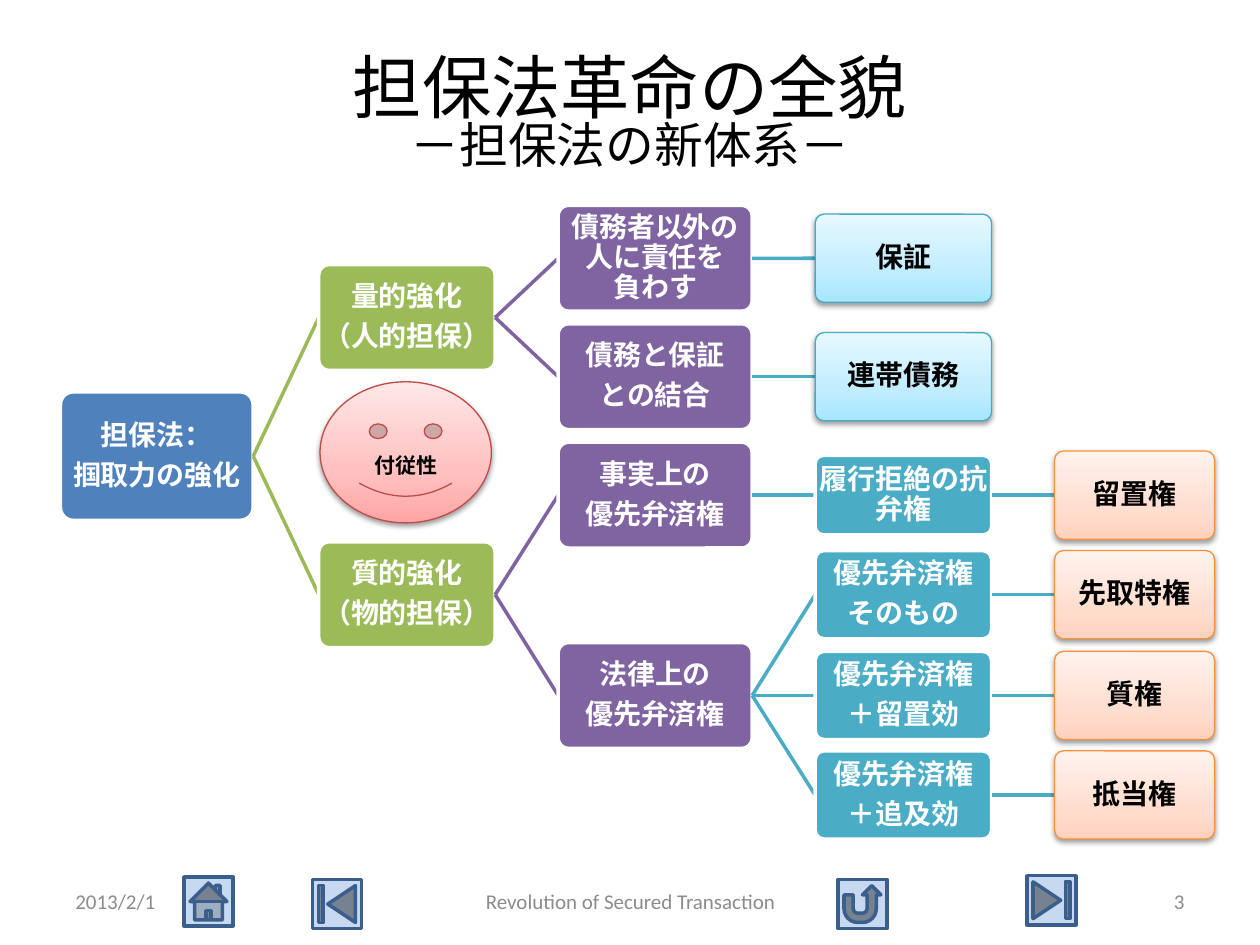
from copy import deepcopy
from pptx import Presentation
from pptx.dml.color import RGBColor
from pptx.enum.shapes import MSO_CONNECTOR, MSO_SHAPE
from pptx.enum.text import MSO_ANCHOR, PP_ALIGN
from pptx.oxml import parse_xml
from pptx.oxml.ns import nsdecls, qn
from pptx.util import Inches, Pt

COLORS = {
    "black": "000000", "white": "FFFFFF", "gray": "8C8C8C",
    "blue": "4F81BD", "green": "9BBB59", "purple": "8064A2", "teal": "4BACC6",
    "button": "C6D9F1", "button_line": "3A5F8C",
    "sky_line": "46AAC5", "orange_line": "F69240", "red_line": "BF4C48",
}
GRADIENTS = {
    "sky": ("A7E6FF", "C1EDFF", "E7F8FF"),
    "orange": ("FFD2BD", "FFDED0", "FFF2ED"),
    "red": ("FFA6A5", "FFC0BF", "FFE7E7"),
}
COLUMNS = [(0.48, 1.53, 1.02), (2.53, 1.4, 0.84), (4.43, 1.54, 0.84),
           (6.47, 1.4, 0.7), (8.37, 1.27, 0.7)]
LEVEL_COLORS = ["blue", "green", "purple", "teal", "teal"]

TREE = ("担保法：\n掴取力の強化", 3.62, "blue", [
    ("量的強化\n（人的担保）", 2.52, "green", [
        ("債務者以外の人に責任を\v負わす", 2.05, "purple", [("保証", 2.05, "sky", [])]),
        ("債務と保証\nとの結合", 2.99, "purple", [("連帯債務", 2.99, "sky", [])]),
    ]),
    ("質的強化\n（物的担保）", 4.72, "green", [
        ("事実上の\n優先弁済権", 3.93, "purple", [
            ("履行拒絶の抗弁権", 3.93, "teal", [("留置権", 3.93, "orange", [])]),
        ]),
        ("法律上の\n優先弁済権", 5.52, "purple", [
            ("優先弁済権\nそのもの", 4.72, "teal", [("先取特権", 4.72, "orange", [])]),
            ("優先弁済権\n＋留置効", 5.52, "teal", [("質権", 5.52, "orange", [])]),
            ("優先弁済権\n＋追及効", 6.31, "teal", [("抵当権", 6.31, "orange", [])]),
        ]),
    ]),
])
BUTTONS = [(MSO_SHAPE.ACTION_BUTTON_HOME, 1.46, 6.96),
           (MSO_SHAPE.ACTION_BUTTON_BEGINNING, 2.48, 6.98),
           (MSO_SHAPE.ACTION_BUTTON_END, 8.15, 6.95),
           (MSO_SHAPE.ACTION_BUTTON_RETURN, 6.65, 6.98)]
FOOTERS = [("2013/2/1", 0.5, 2.33, PP_ALIGN.LEFT),
           ("Revolution of Secured Transaction", 3.42, 3.17, PP_ALIGN.CENTER),
           ("3", 7.17, 2.33, PP_ALIGN.RIGHT)]


class Deck:
    """Holds the style and the current slide, and draws each kind of element."""

    def __init__(self, s, font="Calibri"):
        self.s = s
        self.font = font

    def rgb(self, name):
        return RGBColor.from_string(COLORS[name])

    def label(self, sp, text, sizes, color, align=PP_ALIGN.CENTER, bold=False):
        tf = sp.text_frame
        tf.text = text
        tf.word_wrap = True
        tf.vertical_anchor = MSO_ANCHOR.MIDDLE
        for p in tf.paragraphs:
            p.alignment = align
            for i, r in enumerate(p.runs):
                r.font.name = self.font
                r.font.size = Pt(sizes[min(i, len(sizes) - 1)])
                r.font.bold = bold
                r.font.color.rgb = self.rgb(color)
        return tf

    def text(self, text, x, y, w, h, sizes, color, align=PP_ALIGN.CENTER):
        sp = self.s.shapes.add_textbox(Inches(x), Inches(y), Inches(w), Inches(h))
        return self.label(sp, text, sizes, color, align)

    def shape(self, kind, x, y, w, h, fill, line, width):
        sp = self.s.shapes.add_shape(kind, Inches(x), Inches(y), Inches(w), Inches(h))
        sp.shadow.inherit = False
        sp.line.color.rgb = self.rgb(line)
        sp.line.width = Pt(width)
        if fill in GRADIENTS:
            self.glossy(sp, GRADIENTS[fill])
        else:
            sp.fill.solid()
            sp.fill.fore_color.rgb = self.rgb(fill)
        return sp

    def glossy(self, sp, hexes):
        sp.fill.gradient()
        sp.fill.gradient_angle = 90
        stops = sp._element.spPr.find(".//" + qn("a:gsLst"))
        stops.insert(1, deepcopy(stops[0]))
        for stop, pos, color in zip(sp.fill.gradient_stops, (0, 0.35, 1), hexes):
            stop.position = pos
            stop.color.rgb = RGBColor.from_string(color)
        sp._element.spPr.find(qn("a:effectLst")).append(parse_xml(
            f'<a:outerShdw {nsdecls("a")} blurRad="40000" dist="20000" dir="5400000"'
            ' rotWithShape="0"><a:srgbClr val="000000"><a:alpha val="38000"/>'
            '</a:srgbClr></a:outerShdw>'))

    def box(self, text, level, y, fill):
        x, w, h = COLUMNS[level]
        if text == "履行拒絶の抗弁権":
            h = 0.63
        leaf = fill in GRADIENTS
        line, width = (fill + "_line", 0.75) if leaf else ("white", 2)
        sp = self.shape(MSO_SHAPE.ROUNDED_RECTANGLE, x, y - h / 2, w, h, fill, line, width)
        sp.adjustments[0] = 0.1
        tf = self.label(sp, text, [16], "black" if leaf else "white", bold=True)
        tf.margin_left = tf.margin_right = tf.margin_top = tf.margin_bottom = Inches(0.01)
        for p in tf.paragraphs:
            p.line_spacing = 0.9
            p.space_after = Pt(5.6)
        return sp

    def link(self, parent, color):
        c = self.s.shapes.add_connector(MSO_CONNECTOR.STRAIGHT, 0, 0, 0, 0)
        c.line.color.rgb = self.rgb(color)
        c.line.width = Pt(2)
        c._element.spPr.append(parse_xml(f'<a:effectLst {nsdecls("a")}/>'))
        c.begin_connect(parent, 3)
        return c

    def tree(self, node, level=0, parent=None):
        text, y, fill, children = node
        c = self.link(parent, LEVEL_COLORS[level]) if parent else None
        sp = self.box(text, level, y, fill)
        if c:
            c.end_connect(sp, 1)
        for child in children:
            self.tree(child, level + 1, sp)


def main():
    prs = Presentation()
    prs.slide_width, prs.slide_height = Inches(10), Inches(7.5)
    deck = Deck(prs.slides.add_slide(prs.slide_layouts[6]))
    for kind, x, y in BUTTONS:
        deck.shape(kind, x, y, 0.39, 0.39, "button", "button_line", 2)
    tf = deck.text("担保法革命の全貌\v－担保法の新体系－", 0.5, 0.3, 9, 1.25, [39.6, 27.9], "black")
    tf.paragraphs[0].line_spacing = 0.8
    for text, x, w, align in FOOTERS:
        deck.text(text, x, 6.95, w, 0.4, [12], "gray", align)
    deck.tree(TREE)
    face = deck.shape(MSO_SHAPE.SMILEY_FACE, 2.54, 3.03, 1.36, 1.12, "red", "red_line", 0.75)
    deck.label(face, "付従性", [12], "black", bold=True).margin_top = Inches(0.25)
    prs.save("out.pptx")


if __name__ == "__main__":
    main()
